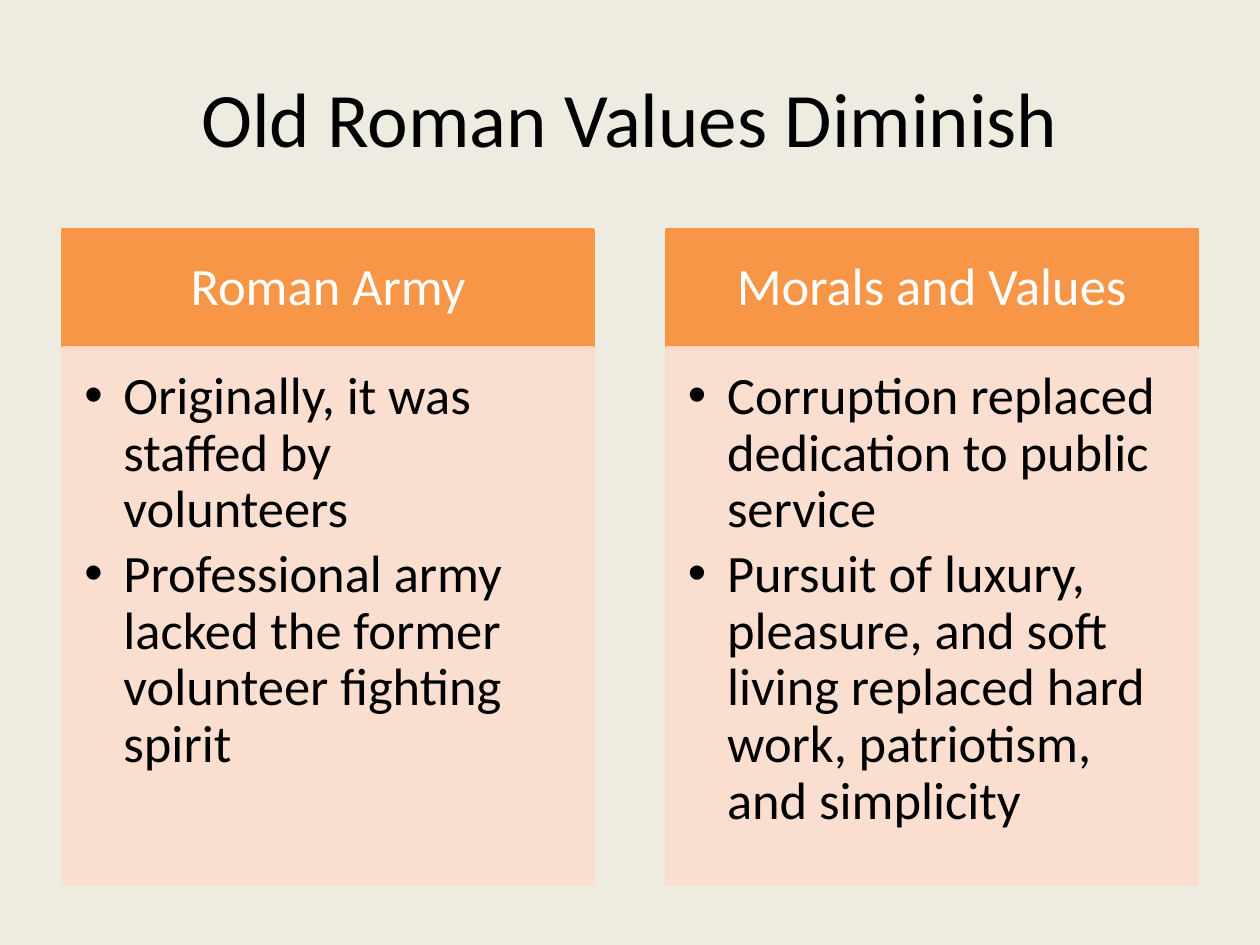
"""Build a slide that compares two sides of the decline of old Roman values."""
from dataclasses import dataclass
from typing import Any

from lxml import etree
from pptx import Presentation
from pptx.dml.color import RGBColor
from pptx.enum.text import MSO_ANCHOR, MSO_AUTO_SIZE, PP_ALIGN
from pptx.oxml.ns import qn
from pptx.util import Inches, Pt

TOP, MID = MSO_ANCHOR.TOP, MSO_ANCHOR.MIDDLE
LEFT, CENTER = PP_ALIGN.LEFT, PP_ALIGN.CENTER
FIXED = MSO_AUTO_SIZE.NONE

WIDE, HIGH = 10, 7.5
EDGE, SPAN, STEP = 0.05, 0.421, 0.479
HEAD_TOP, HEAD_HIGH = 1.82 / HIGH, 0.94 / HIGH
LIST_TOP, LIST_HIGH = 2.76 / HIGH, 4.26 / HIGH
HANG = Inches(0.31)
HUES = {"back": "EEECE1", "head": "F79646", "list": "FCDDCF",
        "dark": "000000", "light": "FFFFFF"}


@dataclass
class Look:
    size: int
    ink: str
    anchor: Any
    align: Any
    pads: tuple[float, float, float, float]
    line: float = 1.0
    after: float = 0
    fill: str = ""
    alpha: int = 100
    bullet: bool = False


@dataclass
class Topic:
    head: str
    items: list[str]


TITLE = Look(44, "dark", MID, CENTER, (0.1, 0.05, 0.1, 0.05))
HEAD = Look(30, "light", MID, CENTER, (0.23, 0.13, 0.23, 0.13), 0.9, 10.5, "head")
LIST = Look(30, "dark", TOP, LEFT, (0.17, 0.17, 0.23, 0.26), 0.9, 4.5, "list", 90, True)
TOPICS = [
    Topic("Roman Army", [
        "Originally, it was staffed by volunteers",
        "Professional army lacked the former volunteer fighting spirit"]),
    Topic("Morals and Values", [
        "Corruption replaced dedication to public service",
        "Pursuit of luxury, pleasure, and soft living replaced hard work, "
        "patriotism, and simplicity"]),
]


def hue(name: str) -> RGBColor:
    """Return the named colour."""
    return RGBColor.from_string(HUES[name])


def apply(target: Any, values: dict[str, Any]) -> None:
    """Set each value as an attribute of the target."""
    for name, value in values.items():
        setattr(target, name, value)


def paint(shape: Any, look: Look) -> None:
    """Give a shape its fill and matching outline."""
    shape.line.width = Pt(2)
    for fill in (shape.fill, shape.line.fill):
        fill.solid()
        fill.fore_color.rgb = hue(look.fill)
    if look.alpha < 100:
        for tint in shape.element.spPr.iter(qn("a:srgbClr")):
            etree.SubElement(tint, qn("a:alpha")).set("val", str(look.alpha * 1000))


def write(para: Any, text: str, look: Look) -> None:
    """Write one paragraph in the given look."""
    apply(para, {"text": text, "alignment": look.align, "line_spacing": look.line,
                 "space_before": Pt(0), "space_after": Pt(look.after)})
    font = para.runs[0].font
    apply(font, {"name": "Calibri", "size": Pt(look.size), "bold": False})
    font.color.rgb = hue(look.ink)
    if look.bullet:
        props = para._p.get_or_add_pPr()
        props.set("marL", str(HANG))
        props.set("indent", str(-HANG))
        etree.SubElement(props, qn("a:buChar")).set("char", "•")


def place(shape: Any, box: tuple[float, float, float, float],
          lines: list[str], look: Look) -> None:
    """Move a placeholder to its share of the slide and fill it with text."""
    left, top, width, height = box
    apply(shape, {"left": Inches(left * WIDE), "top": Inches(top * HIGH),
                  "width": Inches(width * WIDE), "height": Inches(height * HIGH)})
    if look.fill:
        paint(shape, look)
    frame = shape.text_frame
    sides = ("margin_left", "margin_top", "margin_right", "margin_bottom")
    apply(frame, dict(zip(sides, map(Inches, look.pads))))
    apply(frame, {"word_wrap": True, "auto_size": FIXED, "vertical_anchor": look.anchor})
    for row, text in enumerate(lines):
        write(frame.add_paragraph() if row else frame.paragraphs[0], text, look)


def main() -> None:
    """Build and save the slide."""
    deck = Presentation()
    apply(deck, {"slide_width": Inches(WIDE), "slide_height": Inches(HIGH)})
    slide = deck.slides.add_slide(deck.slide_layouts.get_by_name("Comparison"))
    back = slide.background.fill
    back.solid()
    back.fore_color.rgb = hue("back")
    title, *slots = slide.placeholders
    place(title, (EDGE, 0.04, 1 - 2 * EDGE, 1 / 6), ["Old Roman Values Diminish"], TITLE)
    for col, (topic, head, body) in enumerate(zip(TOPICS, slots[::2], slots[1::2])):
        left = EDGE + col * STEP
        place(head, (left, HEAD_TOP, SPAN, HEAD_HIGH), [topic.head], HEAD)
        place(body, (left, LIST_TOP, SPAN, LIST_HIGH), topic.items, LIST)
    deck.save("out.pptx")


if __name__ == "__main__":
    main()
